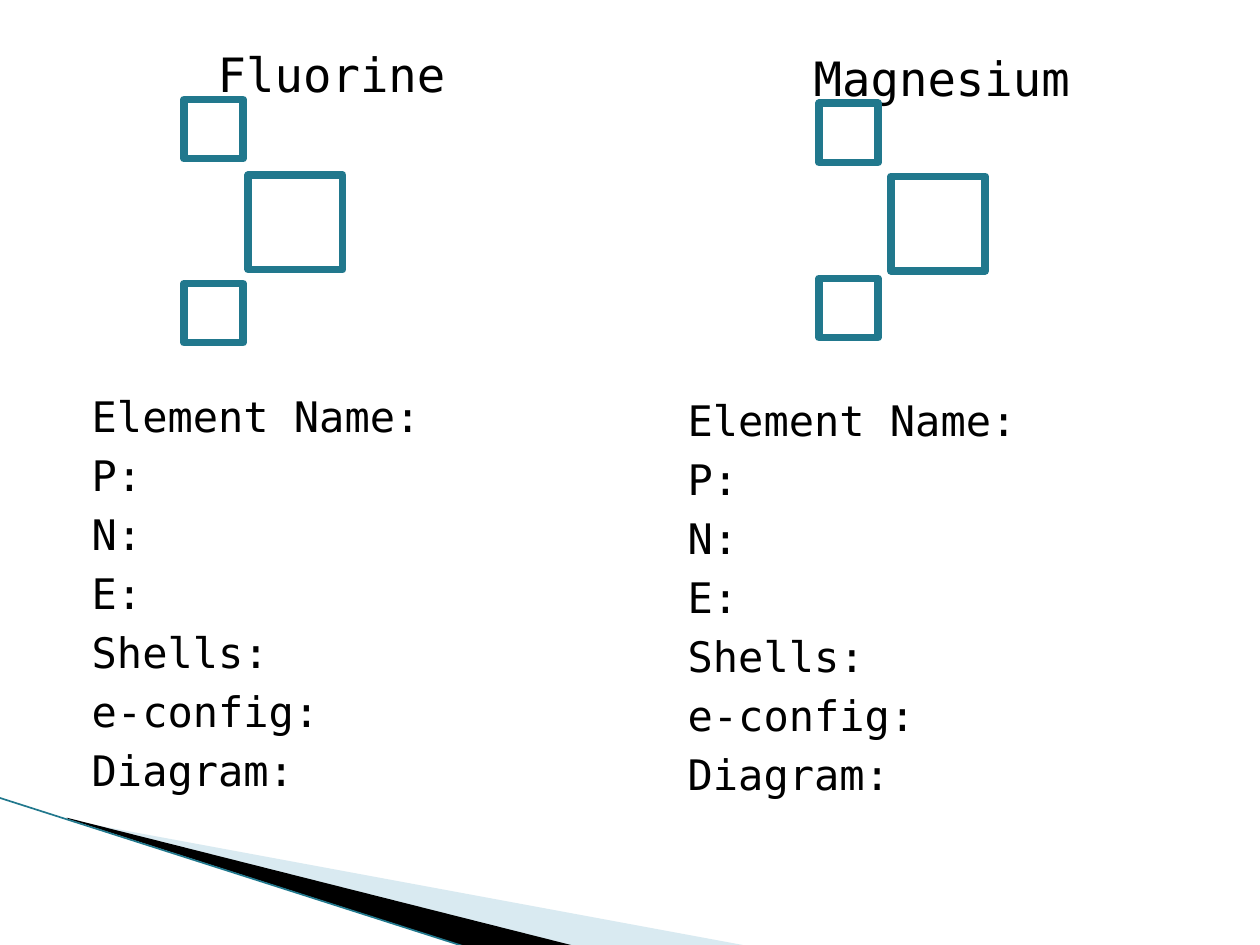
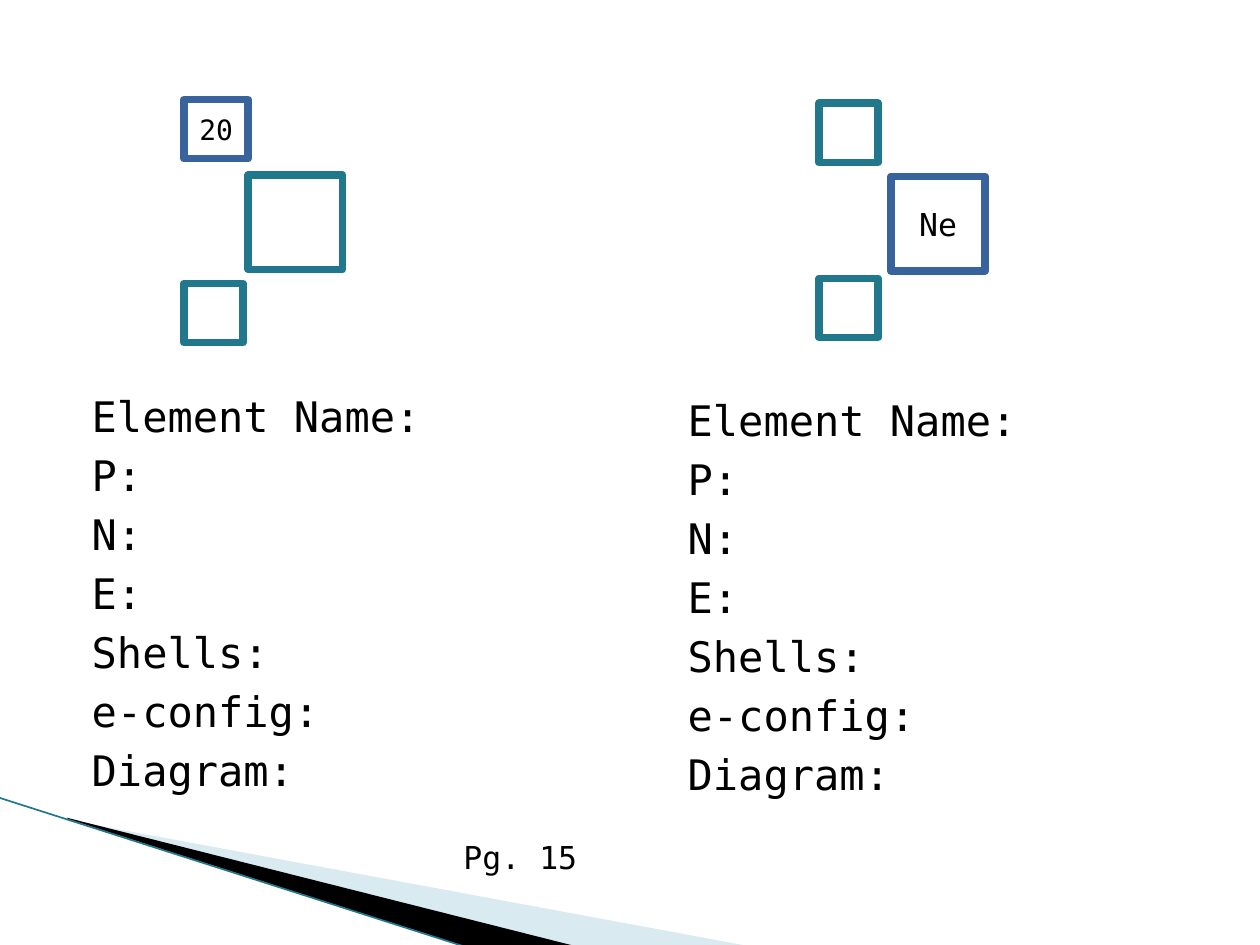
"""Build two worksheet slides for writing element notation and electron details."""
from dataclasses import dataclass

from lxml.etree import SubElement
from pptx import Presentation
from pptx.dml.color import RGBColor
from pptx.enum.shapes import MSO_CONNECTOR, MSO_SHAPE
from pptx.enum.text import MSO_ANCHOR, PP_ALIGN
from pptx.oxml.ns import qn
from pptx.util import Inches, Pt


@dataclass(frozen=True)
class Theme:
    font: str = "DejaVu Sans Mono"
    ink: RGBColor = RGBColor(0x00, 0x00, 0x00)
    paper: RGBColor = RGBColor(0xFF, 0xFF, 0xFF)
    teal: RGBColor = RGBColor(0x21, 0x78, 0x8D)
    blue: RGBColor = RGBColor(0x39, 0x63, 0x9D)
    pale: RGBColor = RGBColor(0xA0, 0xCB, 0xDC)
    name_size: Pt = Pt(27)
    field_size: Pt = Pt(24)
    symbol_size: Pt = Pt(18)
    number_size: Pt = Pt(16)
    field_gap: Pt = Pt(4.9)
    frame_width: Pt = Pt(4.33)
    edge_width: Pt = Pt(0.95)


theme = Theme()


def write(frame, lines, size, align=PP_ALIGN.LEFT):
    frame.word_wrap = True
    frame.text = "\n".join(lines)
    for index, paragraph in enumerate(frame.paragraphs):
        paragraph.alignment = align
        paragraph.space_before = theme.field_gap if index else Pt(0)
        for run in paragraph.runs:
            run.font.name = theme.font
            run.font.size = size
            run.font.color.rgb = theme.ink


def add_text(slide, box, lines, size):
    label = slide.shapes.add_textbox(*map(Inches, box))
    write(label.text_frame, lines, size)


fields = ["Element Name:", "P:", "N:", "E:", "Shells:", "e-config:", "Diagram:"]
wedges = [
    ([(0.55, 6.51), (5.95, 7.51), (4.56, 7.51), (0.55, 6.5)], theme.pale, 40),
    ([(0.53, 6.49), (4.57, 7.51), (3.72, 7.52), (0.54, 6.5)], theme.ink, 100),
]
columns = [
    (0.51, 0, [(1.46, 0.79, 0.47), (1.97, 1.39, 0.75), (1.46, 2.25, 0.47)]),
    (5.24, 0.03, [(6.5, 0.82, 0.47), (7.07, 1.4, 0.75), (6.5, 2.21, 0.47)]),
]
worksheets = [
    {"names": ["Fluorine", "Magnesium"], "clues": {}, "page": ""},
    {
        "names": ["", ""],
        "clues": {
            (0, 0): ("20", theme.number_size, 0.51),
            (1, 1): ("Ne", theme.symbol_size, 0.75),
        },
        "page": "Pg. 15",
    },
]

deck = Presentation()
deck.slide_width = Inches(10)
deck.slide_height = Inches(7.5)

for worksheet in worksheets:
    slide = deck.slides.add_slide(deck.slide_layouts[6])

    for corners, color, opacity in wedges:
        points = [(Inches(x), Inches(y)) for x, y in corners]
        outline = slide.shapes.build_freeform(*points[0])
        outline.add_line_segments(points[1:])
        wedge = outline.convert_to_shape()
        wedge.shadow.inherit = False
        wedge.line.fill.background()
        wedge.fill.solid()
        wedge.fill.fore_color.rgb = color
        if opacity < 100:
            tint = wedge.fill._xPr.find(qn("a:solidFill"))[0]
            SubElement(tint, qn("a:alpha"), val=str(opacity * 1000))

    edge = slide.shapes.add_connector(
        MSO_CONNECTOR.STRAIGHT, *map(Inches, (-0.01, 6.33, 3.71, 7.52))
    )
    edge.line.color.rgb = theme.teal
    edge.line.width = theme.edge_width
    SubElement(edge._element.spPr, qn("a:effectLst"))

    for side, (left, drop, squares) in enumerate(columns):
        name = worksheet["names"][side]
        if name:
            add_text(slide, (left + 1.12, 0.31 + drop, 3, 0.54), [name], theme.name_size)
        add_text(slide, (left + 0.12, 3.05 + drop, 4.3, 3.3), fields, theme.field_size)

        for position, (x, y, size) in enumerate(squares):
            clue = worksheet["clues"].get((side, position))
            width = clue[2] if clue else size
            square = slide.shapes.add_shape(
                MSO_SHAPE.RECTANGLE, *map(Inches, (x, y, width, size))
            )
            square.shadow.inherit = False
            square.fill.solid()
            square.fill.fore_color.rgb = theme.paper
            square.line.color.rgb = theme.blue if clue else theme.teal
            square.line.width = theme.frame_width
            if clue:
                square.text_frame.vertical_anchor = MSO_ANCHOR.MIDDLE
                write(square.text_frame, [clue[0]], clue[1], PP_ALIGN.CENTER)

    if worksheet["page"]:
        add_text(slide, (3.58, 6.6, 1.16, 0.4), [worksheet["page"]], theme.symbol_size)

deck.save("out.pptx")
